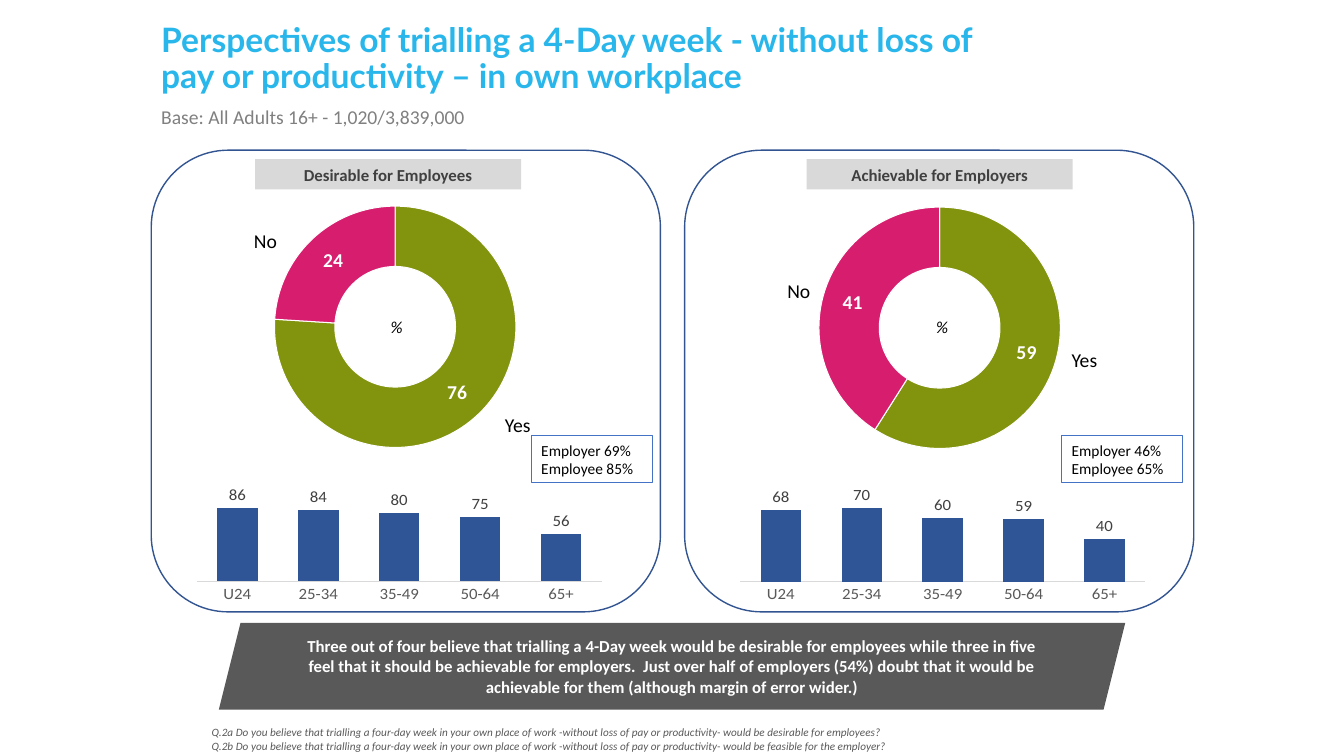
import pptx
import pptx.util
import pptx.chart.data
import pptx.dml.color
import pptx.enum.chart
import pptx.enum.shapes
import pptx.enum.text

Inches = pptx.util.Inches
Pt = pptx.util.Pt
SHAPE = pptx.enum.shapes.MSO_SHAPE
KIND = pptx.enum.chart.XL_CHART_TYPE
LABEL = pptx.enum.chart.XL_LABEL_POSITION
ALIGN = pptx.enum.text.PP_ALIGN
ANCHOR = pptx.enum.text.MSO_ANCHOR

COLORS = {
    "title": "29B7EB", "base": "808080", "frame": "325491", "black": "000000",
    "white": "FFFFFF", "yes": "82930D", "no": "D61D6E", "bar": "2F5597",
    "head": "D9D9D9", "dark": "404040", "grey": "595959", "edge": "4472C4",
}
AGES = ["U24", "25-34", "35-49", "50-64", "65+"]

# Offsets (x, y) are measured from the top left corner of each panel
PANELS = [
    {"left": 1.5, "head": "Desirable for Employees", "split": [76, 24],
     "ages": [86, 84, 80, 75, 56], "staff": "Employer 69%\nEmployee 85%",
     "ring": (0, -0.05), "mark": 2.01, "tag": 1.03, "bars": 0.37, "note": 3.77,
     "yes": (3.41, 2.56), "no": (0.92, 0.73)},
    {"left": 6.79, "head": "Achievable for Employers", "split": [59, 41],
     "ages": [68, 70, 60, 59, 40], "staff": "Employer 46%\nEmployee 65%",
     "ring": (0.11, -0.04), "mark": 2.13, "tag": 1.21, "bars": 0.47, "note": 3.74,
     "yes": (3.74, 1.91), "no": (0.92, 1.23)},
]


def rgb(name):
    return pptx.dml.color.RGBColor.from_string(COLORS[name])


def style(font, size, color, bold=False, italic=False, face="Calibri"):
    font.name, font.size = face, Pt(size)
    font.bold, font.italic = bold, italic
    font.color.rgb = rgb(color)


def write(frame, text, size, color, align=ALIGN.LEFT, space=None, **look):
    frame.word_wrap = True
    frame.text = text
    for para in frame.paragraphs:
        para.alignment = align
        para.line_spacing = space
        for run in para.runs:
            style(run.font, size, color, **look)


def add_text(slide, box, text, size, color, **look):
    frame = slide.shapes.add_textbox(*map(Inches, box)).text_frame
    write(frame, text, size, color, **look)
    return frame


def add_box(slide, kind, box, fill=None, line=None, width=1):
    shape = slide.shapes.add_shape(kind, *map(Inches, box))
    shape.shadow.inherit = False
    if fill:
        shape.fill.solid()
        shape.fill.fore_color.rgb = rgb(fill)
    else:
        shape.fill.background()
    if line:
        shape.line.color.rgb = rgb(line)
        shape.line.width = Pt(width)
    else:
        shape.line.fill.background()
    return shape


def add_chart(slide, kind, box, names, values):
    data = pptx.chart.data.CategoryChartData()
    data.categories = names
    data.add_series("Series 1", values)
    chart = slide.shapes.add_chart(kind, *map(Inches, box), data).chart
    chart.has_legend = chart.has_title = False
    style(chart.font, 12, "black")
    plot = chart.plots[0]
    plot.vary_by_categories = False
    plot.has_data_labels = True
    plot.data_labels.show_value = True
    plot.data_labels.show_percentage = False
    return chart


def add_ring(slide, box, values):
    chart = add_chart(slide, KIND.DOUGHNUT, box, ["1", "2"], values)
    plot = chart.plots[0]
    style(plot.data_labels.font, 14, "white", bold=True)
    for index, color in enumerate(["yes", "no"]):
        look = plot.series[0].points[index].format
        look.fill.solid()
        look.fill.fore_color.rgb = rgb(color)
        look.line.color.rgb = rgb("white")
        look.line.width = Pt(0.75)
    # Fixed plot area and hole size
    area = chart._chartSpace.chart.plotArea
    for old in area.xpath("c:layout"):
        area.remove(old)
    parts = [("layoutTarget", "inner"), ("xMode", "edge"), ("yMode", "edge"),
             ("x", 0.112), ("y", 0.164), ("w", 0.714), ("h", 0.649)]
    inner = "".join(f'<c:{tag} val="{val}"/>' for tag, val in parts)
    area.insert(0, pptx.oxml.parse_xml(
        '<c:layout xmlns:c="http://schemas.openxmlformats.org/drawingml/2006/chart">'
        f"<c:manualLayout>{inner}</c:manualLayout></c:layout>"))
    area.xpath(".//c:holeSize")[0].set("val", "50")


def add_bars(slide, box, values):
    chart = add_chart(slide, KIND.COLUMN_CLUSTERED, box, AGES, values)
    plot = chart.plots[0]
    plot.gap_width, plot.overlap = 100, -27
    plot.data_labels.position = LABEL.OUTSIDE_END
    style(plot.data_labels.font, 12, "dark")
    fill = plot.series[0].format.fill
    fill.solid()
    fill.fore_color.rgb = rgb("bar")
    chart.value_axis.visible = False
    chart.value_axis.has_major_gridlines = False
    chart.value_axis.minimum_scale = 0
    axis = chart.category_axis
    axis.major_tick_mark = pptx.enum.chart.XL_TICK_MARK.NONE
    style(axis.tick_labels.font, 12, "grey")
    axis.format.line.color.rgb = rgb("head")
    axis.format.line.width = Pt(0.75)


def add_mark(slide, box):
    table = slide.shapes.add_table(1, 1, *map(Inches, box)).table
    table.first_row = table.horz_banding = False
    cell = table.cell(0, 0)
    cell.fill.background()
    cell.vertical_anchor = ANCHOR.MIDDLE
    cell.margin_left = cell.margin_right = cell.margin_top = Inches(0.01)
    cell.margin_bottom = 0
    write(cell.text_frame, "%", 12, "black", align=ALIGN.CENTER, italic=True)


def add_panel(slide, box, info):
    left, top, wide, high = box
    add_box(slide, SHAPE.ROUNDED_RECTANGLE, box, line="frame")

    # Doughnut with its centre mark and answers
    x, y = info["ring"]
    add_ring(slide, (left + x, top + y, 5.16, 3.69), info["split"])
    add_mark(slide, (left + info["mark"], top + 1.65, 0.85, 0.2))
    for key, word in (("yes", "Yes"), ("no", "No")):
        x, y = info[key]
        add_text(slide, (left + x, top + y, 0.95, 0.34), word, 14, "black")

    # Heading
    head = add_box(slide, SHAPE.RECTANGLE,
                   (left + info["tag"], top + 0.09, 2.64, 0.3), fill="head")
    write(head.text_frame, info["head"], 12, "dark", align=ALIGN.CENTER, bold=True)

    # Age columns and staff note
    add_bars(slide, (left + info["bars"], top + 3.33, 4.18, 1.19), info["ages"])
    note = add_box(slide, SHAPE.RECTANGLE,
                   (left + info["note"], top + 2.83, 1.2, 0.47), line="edge", width=0.75)
    write(note.text_frame, info["staff"], 11, "black")


def add_header(slide, box):
    left, top, wide, high = box
    frame = add_text(
        slide, (left, top, wide, 0.8),
        "Perspectives of trialling a 4-Day week - without loss of pay or "
        "productivity – in own workplace",
        24, "title", space=0.9, bold=True, face="Lato")
    frame.margin_top = Inches(0.03)
    add_text(slide, (left, top + 0.82, 6.07, 0.35),
             "Base: All Adults 16+ - 1,020/3,839,000", 14, "base", space=0.9)


def add_footer(slide, box):
    left, top, wide, high = box
    # Summary banner
    banner = add_box(slide, SHAPE.PARALLELOGRAM, (left, top, wide, 0.86), fill="grey")
    frame = banner.text_frame
    frame.margin_left = frame.margin_right = 0
    write(frame, "Three out of four believe that trialling a 4-Day week would be "
          "desirable for employees while three in five feel that it should be "
          "achievable for employers.  Just over half of employers (54%) doubt that "
          "it would be achievable for them (although margin of error wider.)",
          12, "white", align=ALIGN.CENTER, bold=True)
    # Questions
    ask = ("Do you believe that trialling a four-day week in your own place of work "
           "-without loss of pay or productivity- would be")
    add_text(slide, (left - 0.17, top + 0.97, 7.5, 0.31),
             f"Q.2a {ask} desirable for employees?\nQ.2b {ask} feasible for the employer?",
             8, "grey", italic=True)


def main():
    deck = pptx.Presentation()
    deck.slide_width, deck.slide_height = Inches(13.33), Inches(7.5)
    slide = deck.slides.add_slide(deck.slide_layouts[6])
    add_header(slide, (1.5, 0.2, 8.7, 1.17))
    for info in PANELS:
        add_panel(slide, (info["left"], 1.49, 5.05, 4.58), info)
    add_footer(slide, (2.17, 6.18, 8.99, 1.28))
    deck.save("out.pptx")


if __name__ == "__main__":
    main()
